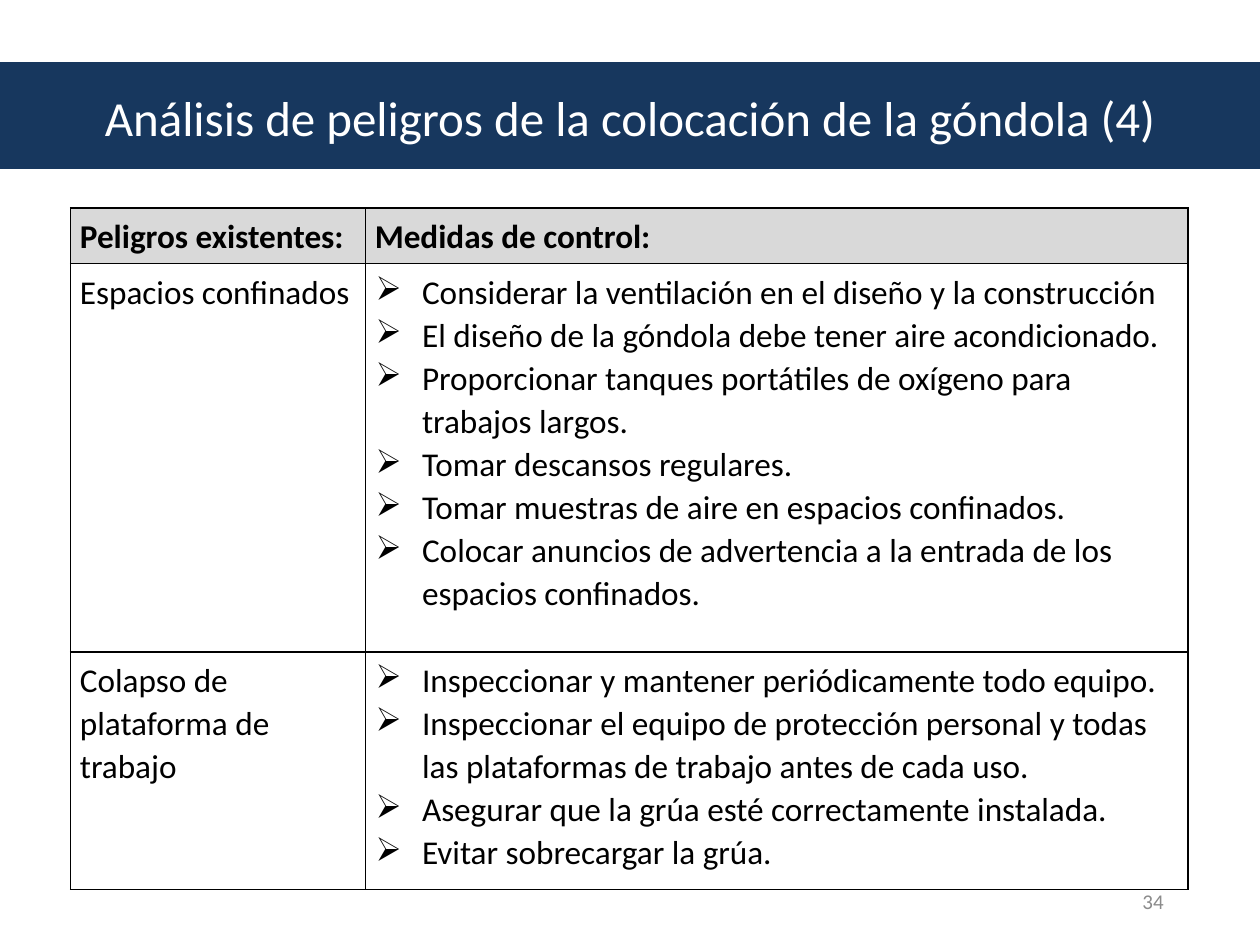
import dataclasses

import lxml.etree
import pptx
import pptx.dml.color
import pptx.enum.shapes
import pptx.enum.text
import pptx.oxml.ns
import pptx.util

Pt = pptx.util.Pt
ALIGN = pptx.enum.text.PP_ALIGN
MIDDLE = pptx.enum.text.MSO_ANCHOR.MIDDLE


@dataclasses.dataclass(frozen=True)
class Theme:
    font: str = "Calibri"
    navy: str = "17375E"
    white: str = "FFFFFF"
    black: str = "000000"
    header_gray: str = "D9D9D9"
    number_gray: str = "8B8B8B"
    title_size: float = 28
    table_size: float = 19
    number_size: float = 12
    border_width: float = 0.96
    line_spacing: float = 1.07
    bullet: str = "➢"
    bullet_margin: float = 27
    bullet_indent: float = -26.5


def rgb(color):
    return pptx.dml.color.RGBColor.from_string(color)


def add_xml(parent, tag, **attributes):
    return lxml.etree.SubElement(parent, pptx.oxml.ns.qn(tag), attributes)


class SlideBuilder:
    def __init__(self, slide, theme):
        self.slide = slide
        self.theme = theme

    def add_text(self, paragraph, text, size, color, bold=False):
        run = paragraph.add_run()
        run.text = text
        run.font.name = self.theme.font
        run.font.size = Pt(size)
        run.font.bold = bold
        run.font.color.rgb = rgb(color)

    def band(self, left, top, width, height):
        """Add the coloured strip that lies behind the title."""
        strip = self.slide.shapes.add_shape(
            pptx.enum.shapes.MSO_SHAPE.RECTANGLE,
            Pt(left), Pt(top), Pt(width), Pt(height))
        strip.shadow.inherit = False
        strip.fill.solid()
        strip.fill.fore_color.rgb = rgb(self.theme.navy)
        strip.line.color.rgb = rgb(self.theme.navy)
        strip.line.width = Pt(0.75)
        self.slide.shapes.title.element.addprevious(strip.element)

    def title(self, text, left, top, width, height):
        heading = self.slide.shapes.title
        heading.left, heading.top = Pt(left), Pt(top)
        heading.width, heading.height = Pt(width), Pt(height)
        heading.text_frame.vertical_anchor = MIDDLE
        paragraph = heading.text_frame.paragraphs[0]
        paragraph.alignment = ALIGN.CENTER
        self.add_text(paragraph, text, self.theme.title_size, self.theme.white)

    def page_number(self, text, left, top, width, height):
        frame = self.slide.shapes.add_textbox(
            Pt(left), Pt(top), Pt(width), Pt(height)).text_frame
        frame.word_wrap = True
        frame.vertical_anchor = MIDDLE
        paragraph = frame.paragraphs[0]
        paragraph.alignment = ALIGN.RIGHT
        self.add_text(paragraph, text, self.theme.number_size, self.theme.number_gray)

    def table(self, rows, left, top, column_widths, row_heights):
        """Add a table whose first row is the header and last column is bulleted."""
        grid = self.slide.shapes.add_table(
            len(row_heights), len(column_widths), Pt(left), Pt(top),
            Pt(sum(column_widths)), Pt(sum(row_heights))).table
        grid.horz_banding = False
        for column, width in zip(grid.columns, column_widths):
            column.width = Pt(width)
        for row, height in zip(grid.rows, row_heights):
            row.height = Pt(height)
        for row_index, row in enumerate(rows):
            for column_index, lines in enumerate(row):
                is_header = row_index == 0
                self.cell(grid.cell(row_index, column_index), lines, is_header,
                          bulleted=column_index == 1 and not is_header)

    def cell(self, cell, lines, is_header, bulleted):
        cell.margin_left = cell.margin_right = Pt(5.4)
        cell.margin_top = cell.margin_bottom = Pt(3.6)
        self.borders(cell)
        if is_header:
            cell.fill.solid()
            cell.fill.fore_color.rgb = rgb(self.theme.header_gray)
        else:
            cell.fill.background()
        frame = cell.text_frame
        for index, line in enumerate(lines):
            paragraph = frame.add_paragraph() if index else frame.paragraphs[0]
            paragraph.line_spacing = self.theme.line_spacing
            if bulleted:
                self.bullet(paragraph)
            self.add_text(paragraph, line, self.theme.table_size,
                          self.theme.black, bold=is_header)

    def borders(self, cell):
        properties = cell._tc.get_or_add_tcPr()
        for side in ("a:lnL", "a:lnR", "a:lnT", "a:lnB"):
            edge = add_xml(properties, side, w=str(Pt(self.theme.border_width)))
            add_xml(add_xml(edge, "a:solidFill"), "a:srgbClr", val=self.theme.black)

    def bullet(self, paragraph):
        properties = paragraph._p.get_or_add_pPr()
        properties.set("marL", str(Pt(self.theme.bullet_margin)))
        properties.set("indent", str(Pt(self.theme.bullet_indent)))
        add_xml(add_xml(properties, "a:buClr"), "a:srgbClr", val=self.theme.black)
        add_xml(properties, "a:buChar", char=self.theme.bullet)


HAZARDS = [
    (["Peligros existentes:"], ["Medidas de control:"]),
    (["Espacios confinados"], [
        "Considerar la ventilación en el diseño y la construcción",
        "El diseño de la góndola debe tener aire acondicionado.",
        "Proporcionar tanques portátiles de oxígeno para trabajos largos.",
        "Tomar descansos regulares.",
        "Tomar muestras de aire en espacios confinados.",
        "Colocar anuncios de advertencia a la entrada de los espacios confinados.",
    ]),
    (["Colapso de plataforma de trabajo"], [
        "Inspeccionar y mantener periódicamente todo equipo.",
        "Inspeccionar el equipo de protección personal y todas las plataformas "
        "de trabajo antes de cada uso.",
        "Asegurar que la grúa esté correctamente instalada.",
        "Evitar sobrecargar la grúa.",
    ]),
]


def main():
    presentation = pptx.Presentation()
    presentation.slide_width, presentation.slide_height = Pt(720), Pt(540)
    title_only = presentation.slide_layouts[5]
    builder = SlideBuilder(presentation.slides.add_slide(title_only), Theme())
    builder.band(0, 36, 720, 60)
    builder.title("Análisis de peligros de la colocación de la góndola (4)",
                  36, 21.6, 648, 90)
    builder.table(HAZARDS, 40.3, 118.8, column_widths=(168.5, 470.2),
                  row_heights=(31.6, 221.8, 136))
    builder.page_number("34", 504, 500.5, 168, 28.8)
    presentation.save("out.pptx")


if __name__ == "__main__":
    main()
